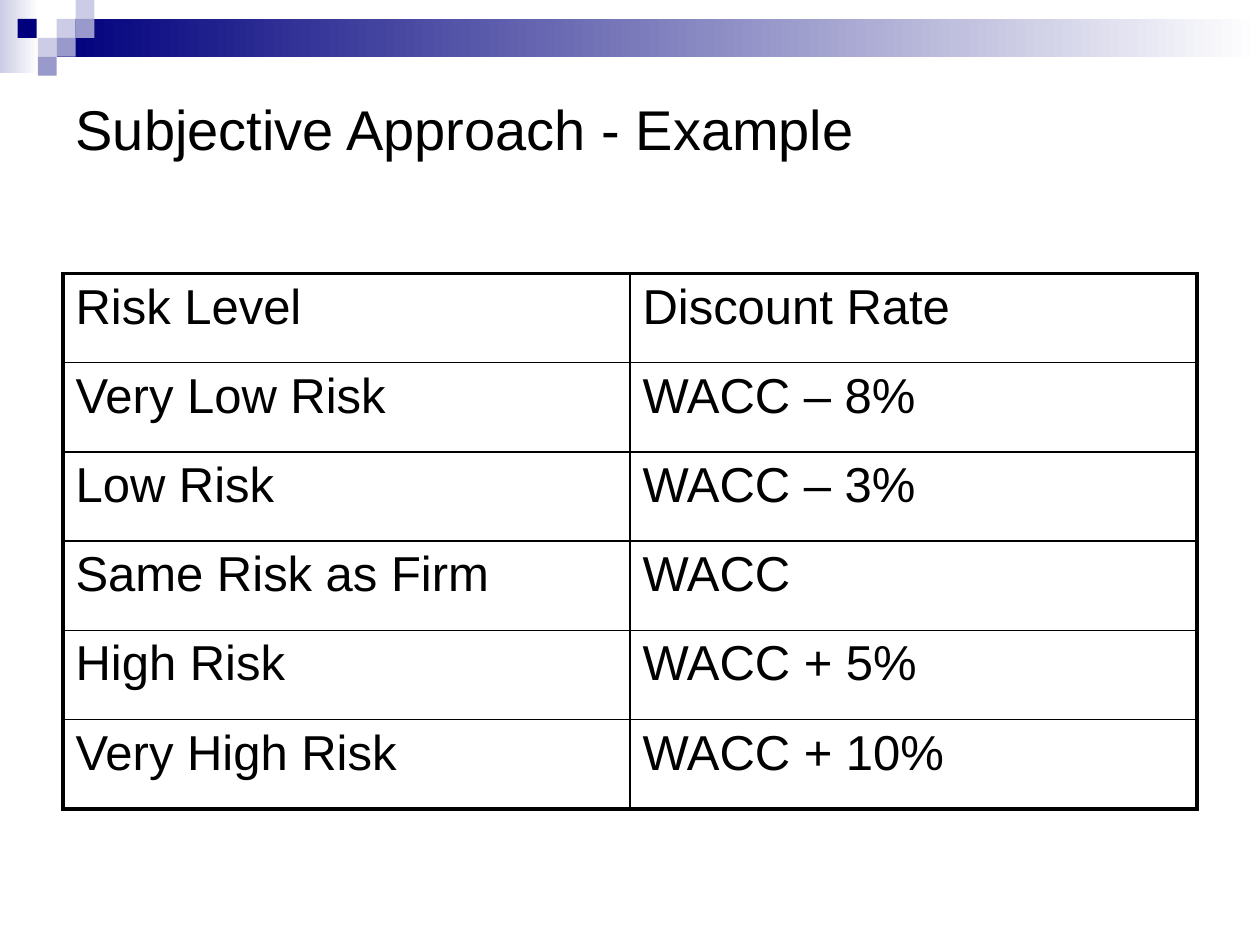
from lxml import etree
from pptx import Presentation
from pptx.dml.color import RGBColor
from pptx.enum.shapes import MSO_SHAPE
from pptx.enum.text import MSO_ANCHOR, PP_ALIGN
from pptx.oxml.ns import qn
from pptx.util import Inches, Pt

RECT = MSO_SHAPE.RECTANGLE
MIDDLE = MSO_ANCHOR.MIDDLE
LEFT = PP_ALIGN.LEFT
FONT = "Arial"
COLORS = {
    "navy": "00007D",
    "mid": "9999CC",
    "pale": "CCCCE6",
    "white": "FFFFFF",
    "black": "000000",
}
THIN, THICK = 1, 2.25
SIDE = 0.15
# Left, top and colour of each small square
SQUARES = [
    (0.45, 0.15, "pale"),
    (0.6, 0, "pale"),
    (0.6, 0.15, "mid"),
    (0.3, 0.3, "pale"),
    (0.14, 0.15, "navy"),
    (0.45, 0.3, "mid"),
    (0.3, 0.45, "mid"),
]
RATES = [
    ("Risk Level", "Discount Rate"),
    ("Very Low Risk", "WACC – 8%"),
    ("Low Risk", "WACC – 3%"),
    ("Same Risk as Firm", "WACC"),
    ("High Risk", "WACC + 5%"),
    ("Very High Risk", "WACC + 10%"),
]


def color(name):
    return RGBColor.from_string(COLORS[name])


def style_text(frame, size):
    for para in frame.paragraphs:
        para.alignment = LEFT
        for run in para.runs:
            run.font.name = FONT
            run.font.size = Pt(size)
            run.font.color.rgb = color("black")


def add_rect(slide, left, top, width, height, *names):
    """One colour name gives a solid fill, two give a left-to-right fade."""
    box = slide.shapes.add_shape(
        RECT, Inches(left), Inches(top), Inches(width), Inches(height))
    box.shadow.inherit = False
    box.line.fill.background()
    if len(names) == 1:
        box.fill.solid()
        box.fill.fore_color.rgb = color(names[0])
        return
    box.fill.gradient()
    box.fill.gradient_angle = 0
    for stop, name, pos in zip(box.fill.gradient_stops, names, (0, 1)):
        stop.color.rgb = color(name)
        stop.position = pos


def add_title(slide, text):
    title = slide.shapes.title
    title.left, title.top = Inches(0.5), Inches(0.5)
    title.width, title.height = Inches(9), Inches(1.04)
    frame = title.text_frame
    frame.text = text
    frame.vertical_anchor = MIDDLE
    style_text(frame, 32)


def set_border(cell, tag, width):
    line = etree.SubElement(cell._tc.get_or_add_tcPr(), qn(tag),
                            w=str(Pt(width)))
    fill = etree.SubElement(line, qn("a:solidFill"))
    etree.SubElement(fill, qn("a:srgbClr"), val=COLORS["black"])


def add_rates(slide, data):
    rows, cols = len(data), len(data[0])
    frame = slide.shapes.add_table(
        rows, cols, Inches(0.5), Inches(2.17), Inches(9), Inches(4.25))
    table = frame.table
    table.first_row = table.horz_banding = False
    for i, values in enumerate(data):
        for j, text in enumerate(values):
            cell = table.cell(i, j)
            cell.text_frame.text = text
            style_text(cell.text_frame, 28)
            # Thick outer frame, thin inner rules
            edges = {
                "a:lnL": j == 0,
                "a:lnR": j == cols - 1,
                "a:lnT": i == 0,
                "a:lnB": i == rows - 1,
            }
            for tag, outer in edges.items():
                set_border(cell, tag, THICK if outer else THIN)
            cell.fill.background()


def main():
    deck = Presentation()
    deck.slide_width, deck.slide_height = Inches(10), Inches(7.5)
    slide = deck.slides.add_slide(deck.slide_layouts[5])

    # Header band and squares
    add_rect(slide, 0, 0, 0.31, 0.58, "pale", "white")
    add_rect(slide, 0.45, 0.15, 9.55, 0.3, "navy", "white")
    for left, top, name in SQUARES:
        add_rect(slide, left, top, SIDE, SIDE, name)

    # Title and table
    add_title(slide, "Subjective Approach - Example")
    add_rates(slide, RATES)
    deck.save("out.pptx")


if __name__ == "__main__":
    main()
